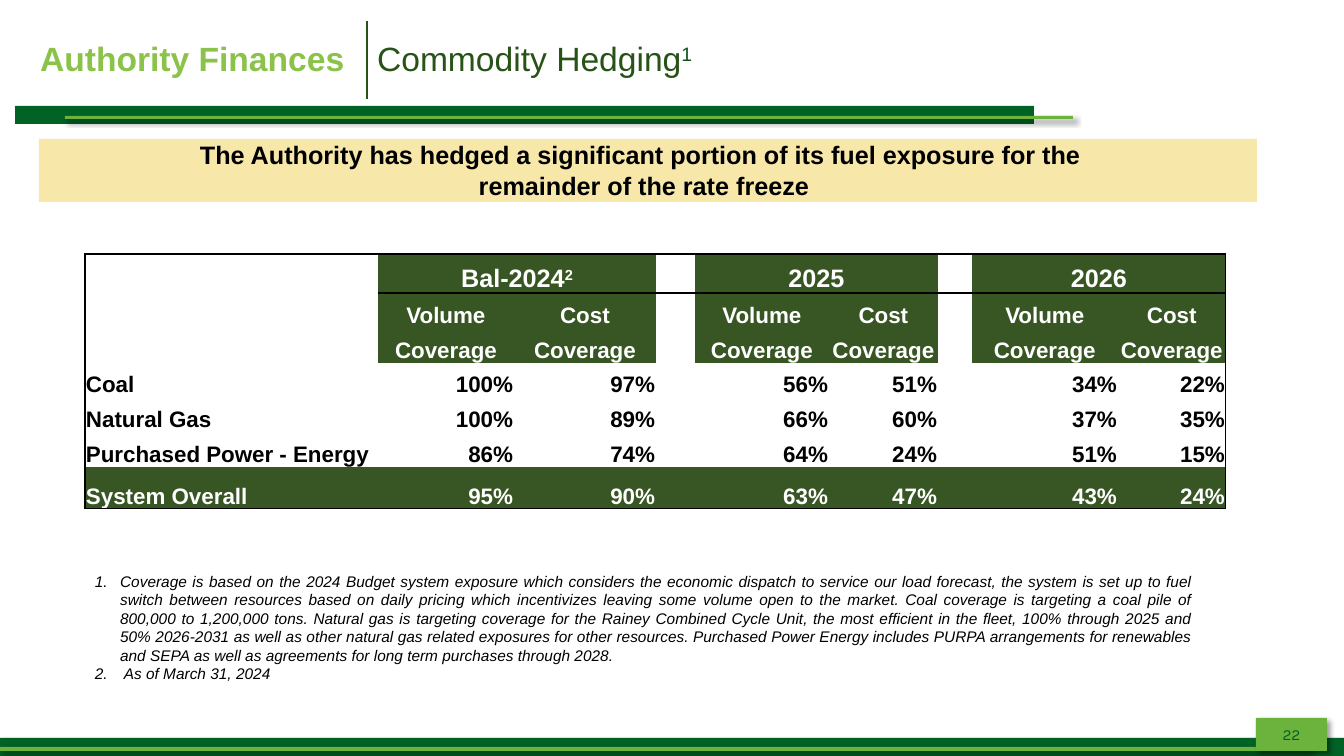
from lxml import etree
from pptx import Presentation
from pptx.dml.color import RGBColor as Rgb
from pptx.enum.shapes import MSO_SHAPE as Shape
from pptx.enum.text import MSO_ANCHOR as Anchor, PP_ALIGN as Align
from pptx.oxml.ns import qn
from pptx.util import Pt

PX = 914400 / 100.8
HUES = {
    "white": "FFFFFF", "black": "000000", "forest": "006224",
    "leaf": "6CB33E", "moss": "375623", "sand": "F7E8AA",
    "lime": "8BC34A", "pine": "275317", "fern": "0A531C",
}
RGB = {name: Rgb.from_string(code) for name, code in HUES.items()}
PLAIN = "{2D5ABB26-0587-4C30-8999-92F81FD0307C}"

deck = Presentation()
deck.slide_width, deck.slide_height = round(1344 * PX), round(756 * PX)
slide = deck.slides.add_slide(deck.slide_layouts[6])
shapes = slide.shapes


def write(para, text, hue, align=Align.LEFT, **form):
    """Add a run to a paragraph; a trailing ^x becomes superscript."""
    para.alignment = align
    base, mark, power = text.partition("^")
    for part in (base, power) if mark else (base,):
        run = para.add_run()
        run.text = part
        run.font.color.rgb = RGB[hue]
        for key, val in ({"name": "Arial"} | form).items():
            setattr(run.font, key, val)
    if mark:
        run.font.color.rgb = RGB["fern" if hue == "pine" else hue]
        run.font._element.set("baseline", "30000")


def edge(cell, sides, hue):
    """Draw one-point borders on the given sides, in L R T B order."""
    props = cell._tc.get_or_add_tcPr()
    for side in sides:
        line = etree.SubElement(props, qn(f"a:ln{side}"), w=str(Pt(1)))
        fill = etree.SubElement(line, qn("a:solidFill"))
        etree.SubElement(fill, qn("a:srgbClr"), val=HUES[hue])


# Bars, page box and banner
blocks = {}
for name, x, y, w, h, hue, shade in [
    ("top", 15, 106, 1019, 18, "forest", False),
    ("stripe", 65, 116, 1008, 3, "leaf", True),
    ("foot", -1, 738, 1346, 25, "forest", True),
    ("thread", -1, 747, 1310, 4, "leaf", True),
    ("page", 1256, 718, 71, 33, "leaf", True),
    ("banner", 39, 139, 1218, 63, "sand", False),
]:
    block = shapes.add_shape(Shape.RECTANGLE, *(round(n * PX) for n in (x, y, w, h)))
    block.fill.solid()
    block.fill.fore_color.rgb = RGB[hue]
    block.line.fill.background()
    block.shadow.inherit = False
    if shade:
        glow = etree.SubElement(
            block._element.spPr.find(qn("a:effectLst")), qn("a:outerShdw"),
            blurRad=str(Pt(4)), dist=str(Pt(3)), dir="2700000", rotWithShape="0")
        tint = etree.SubElement(glow, qn("a:srgbClr"), val=HUES["black"])
        etree.SubElement(tint, qn("a:alpha"), val="40000")
    blocks[name] = block.text_frame

page = blocks["page"]
page.vertical_anchor = Anchor.MIDDLE
write(page.paragraphs[0], "22", "forest", Align.CENTER, name="Karla", size=Pt(11))

banner = blocks["banner"]
banner.word_wrap = True
banner.vertical_anchor = Anchor.MIDDLE
for side, gap in {"left": 0, "top": 0, "right": 8, "bottom": 1}.items():
    setattr(banner, f"margin_{side}", round(gap * PX))
claim = banner.paragraphs[0]
write(claim, "The Authority has hedged a significant portion of its fuel exposure for the ",
      "black", Align.CENTER, size=Pt(18), bold=True)
claim.add_line_break()
write(claim, "remainder of the rate freeze", "black", Align.CENTER, size=Pt(18), bold=True)

# Title and coverage grids
grids = {}
for name, x, y, cols, rows in [
    ("title", 30, 21, [337, 641], [78]),
    ("cover", 85, 254, [293, 136, 142, 39, 134, 109, 34, 146, 108],
     [39, 35, 35, 34, 35, 35, 42]),
]:
    box = (round(n * PX) for n in (x, y, sum(cols), sum(rows)))
    grid = shapes.add_table(len(rows), len(cols), *box).table
    grid.first_row = grid.horz_banding = False
    grid._tbl.tblPr.find(qn("a:tableStyleId")).text = PLAIN
    for col, width in zip(grid.columns, cols):
        col.width = round(width * PX)
    for row, height in zip(grid.rows, rows):
        row.height = round(height * PX)
    grids[name] = grid

# Title
title = grids["title"]
for i, (text, hue, side) in enumerate([
    ("Authority Finances", "lime", "R"), ("Commodity Hedging^1", "pine", "L"),
]):
    cell = title.cell(0, i)
    cell.vertical_anchor = Anchor.MIDDLE
    edge(cell, side, "pine")
    cell.fill.background()
    write(cell.text_frame.paragraphs[0], text, hue, size=Pt(24), bold=i == 0)

# Coverage table
cover = grids["cover"]
GAPS = (3, 6)
data = [
    ["", "Bal-2024^2", "", "", "2025", "", "", "2026", ""],
    [""] + ["Volume", "Cost", ""] * 2 + ["Volume", "Cost"],
    [""] + ["Coverage", "Coverage", ""] * 2 + ["Coverage"] * 2,
    ["Coal", "100%", "97%", "", "56%", "51%", "", "34%", "22%"],
    ["Natural Gas", "100%", "89%", "", "66%", "60%", "", "37%", "35%"],
    ["Purchased Power - Energy", "86%", "74%", "", "64%", "24%", "", "51%", "15%"],
    ["System Overall", "95%", "90%", "", "63%", "47%", "", "43%", "24%"],
]
for i in (1, 4, 7):
    cover.cell(0, i).merge(cover.cell(0, i + 1))
for r, line in enumerate(data):
    head, last = r < 3, r == 6
    for c, text in enumerate(line):
        cell = cover.cell(r, c)
        cell.vertical_anchor = Anchor.BOTTOM
        for side, gap in {"left": 1, "top": 1, "right": 1, "bottom": 0}.items():
            setattr(cell, f"margin_{side}", round(gap * PX))
        sides = "L" if c == 0 else ""
        sides += "R" if c == 8 or (r == 0 and c == 7) else ""
        sides += "T" if r == 0 else ""
        sides += "B" if last or (r == 0 and c > 0) else ""
        edge(cell, sides, "black")
        dark = last or (head and c > 0 and c not in GAPS)
        cell.fill.solid()
        cell.fill.fore_color.rgb = RGB["moss" if dark else "white"]
        if text:
            align = Align.CENTER if head else Align.RIGHT if c else Align.LEFT
            write(cell.text_frame.paragraphs[0], text, "white" if dark else "black",
                  align, size=Pt(18 if r == 0 else 16), bold=True)

# Footnotes
notes = shapes.add_textbox(*(round(n * PX) for n in (85, 567, 1118, 122))).text_frame
notes.word_wrap = True
for i, text in enumerate([
    "Coverage is based on the 2024 Budget system exposure which considers the economic "
    "dispatch to service our load forecast, the system is set up to fuel switch between "
    "resources based on daily pricing which incentivizes leaving some volume open to the "
    "market. Coal coverage is targeting a coal pile of 800,000 to 1,200,000 tons. Natural "
    "gas is targeting coverage for the Rainey Combined Cycle Unit, the most efficient in "
    "the fleet, 100% through 2025 and 50% 2026-2031 as well as other natural gas related "
    "exposures for other resources. Purchased Power Energy includes PURPA arrangements for "
    "renewables and SEPA as well as agreements for long term purchases through 2028.",
    " As of March 31, 2024",
]):
    para = notes.add_paragraph() if i else notes.paragraphs[0]
    props = para._p.get_or_add_pPr()
    props.set("marL", "228600")
    props.set("indent", "-228600")
    etree.SubElement(props, qn("a:buFont"), typeface="+mj-lt")
    etree.SubElement(props, qn("a:buAutoNum"), type="arabicPeriod")
    write(para, text, "black", Align.JUSTIFY, size=Pt(11), italic=True)

deck.save("out.pptx")
